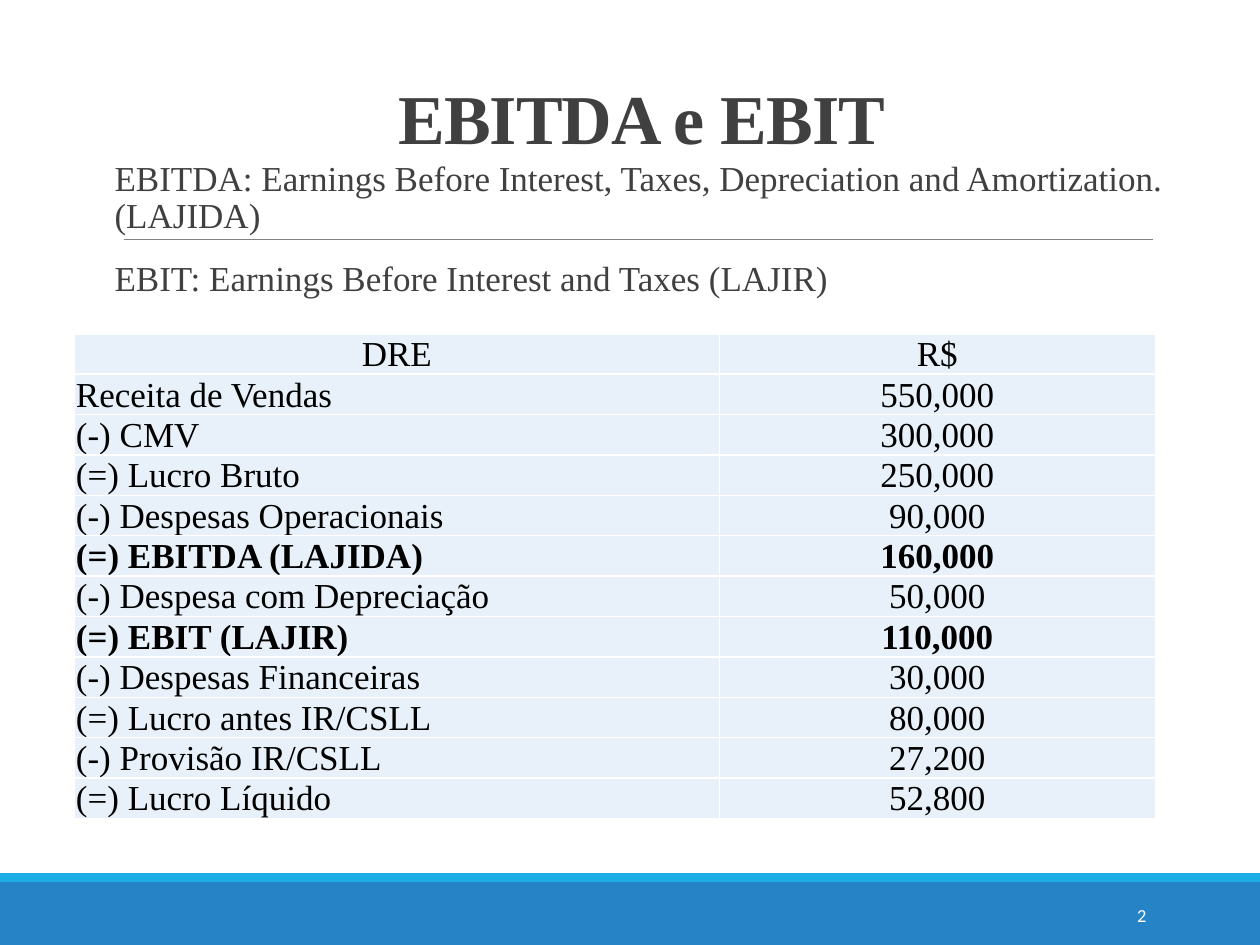
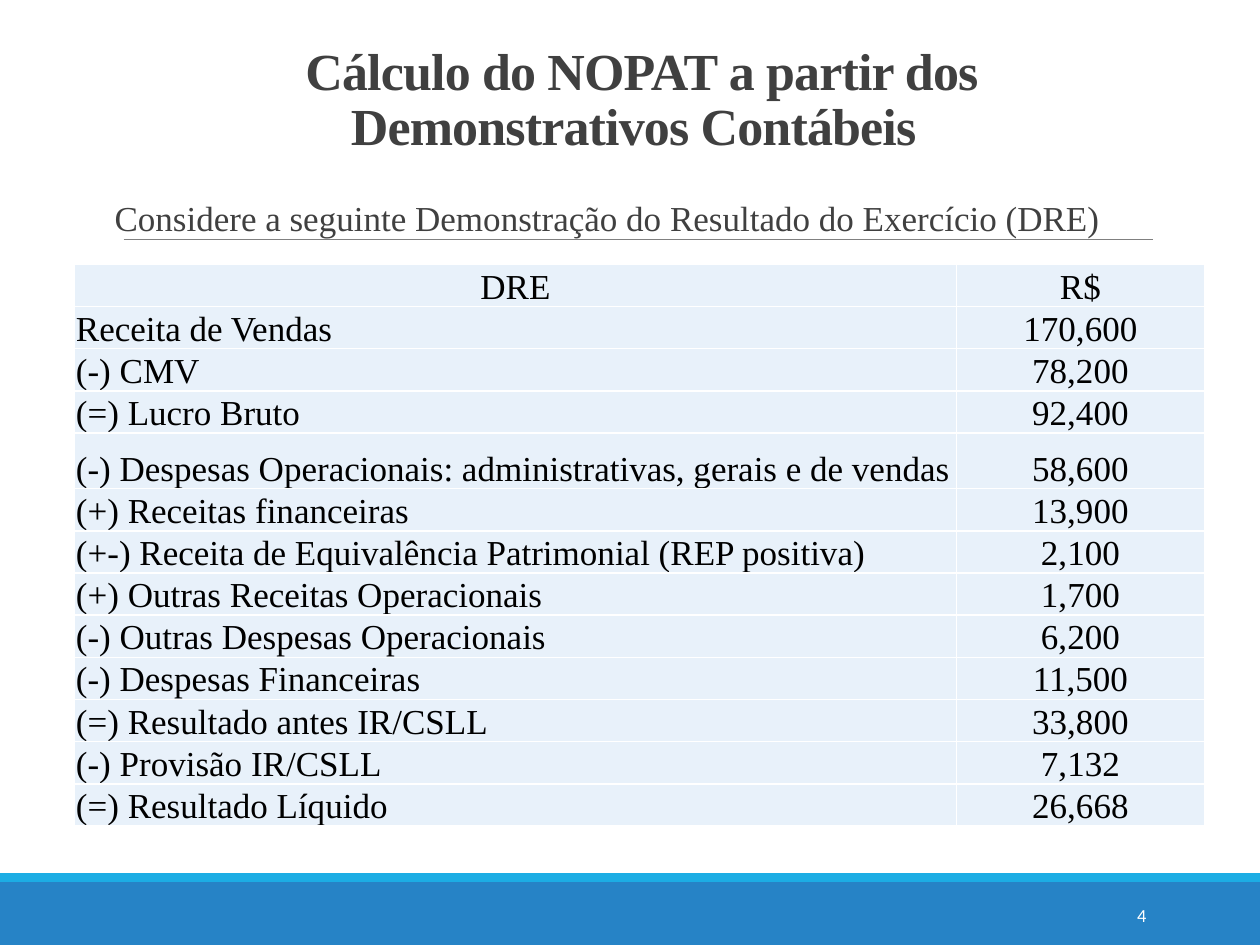
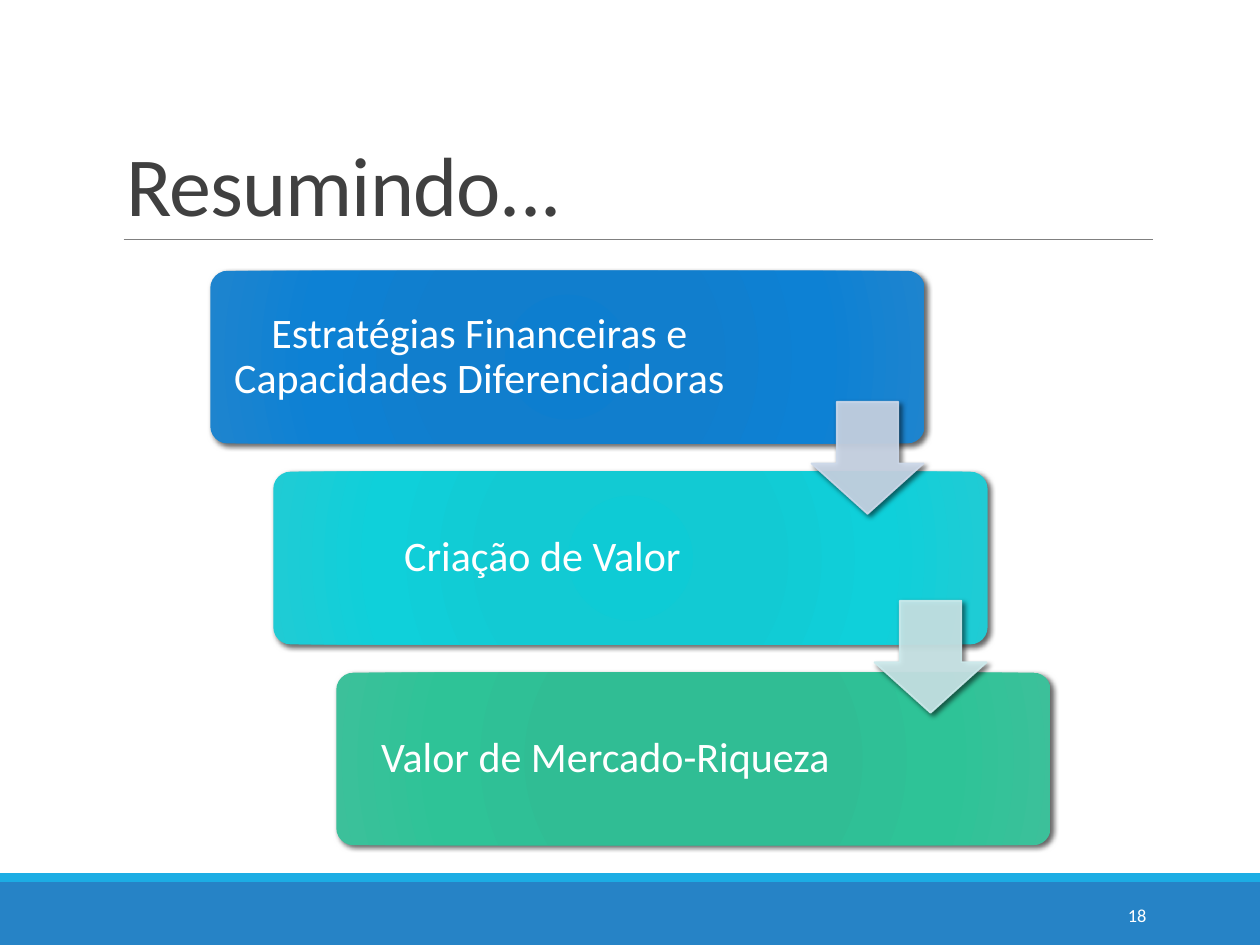
from lxml import etree
from pptx import Presentation
from pptx.dml.color import RGBColor
from pptx.enum.shapes import MSO_CONNECTOR, MSO_SHAPE
from pptx.enum.text import MSO_ANCHOR, MSO_AUTO_SIZE, PP_ALIGN
from pptx.oxml import parse_xml
from pptx.oxml.ns import nsdecls, qn
from pptx.util import Cm, Pt

LEFT, CENTER, RIGHT, JUSTIFY = PP_ALIGN.LEFT, PP_ALIGN.CENTER, PP_ALIGN.RIGHT, PP_ALIGN.JUSTIFY
MIDDLE, BOTTOM = MSO_ANCHOR.MIDDLE, MSO_ANCHOR.BOTTOM

THEME = {
    "band": "2683C6", "strip": "1CADE4", "rule": "808080", "cell": "E8F1FA", "border": "FFFFFF",
    "title": {"color": "404040", "name": "Times New Roman", "bold": True},
    "closing_title": {"color": "404040", "name": "Calibri", "bold": False},
    "body": {"color": "404040", "name": "Times New Roman", "size": Pt(20)},
    "table": {"color": "000000", "name": "Times New Roman", "size": Pt(20), "bold": False},
    "step": {"color": "FFFFFF", "name": "Calibri", "size": Pt(24)},
    "number": {"color": "FFFFFF", "name": "Calibri", "size": Pt(10.5)},
}

STATEMENTS = [
    {
        "number": "2", "title": [(" EBITDA e EBIT", 40)], "title_top": 0.79, "body_top": 3.12,
        "body": [
            ("EBITDA: Earnings Before Interest, Taxes, Depreciation and Amortization. (LAJIDA)", LEFT),
            ("EBIT: Earnings Before Interest and Taxes (LAJIR)", JUSTIFY),
        ],
        "table_top": 6.73, "columns": [13, 8.79], "row_height": 0.81,
        "tall_rows": {}, "bold_rows": [5, 7],
        "rows": [
            ("DRE", "R$"),
            ("Receita de Vendas", "550,000"),
            ("(-) CMV", "300,000"),
            ("(=) Lucro Bruto", "250,000"),
            ("(-) Despesas Operacionais", "90,000"),
            ("(=) EBITDA (LAJIDA)", "160,000"),
            ("(-) Despesa com Depreciação", "50,000"),
            ("(=) EBIT (LAJIR)", "110,000"),
            ("(-) Despesas Financeiras", "30,000"),
            ("(=) Lucro antes IR/CSLL", "80,000"),
            ("(-) Provisão IR/CSLL", "27,200"),
            ("(=) Lucro Líquido", "52,800"),
        ],
    },
    {
        "number": "4", "title_top": 0.74, "body_top": 3.94,
        "title": [(" ", 36), ("Cálculo do NOPAT a partir dos Demonstrativos Contábeis", 29.7)],
        "body": [("Considere a seguinte Demonstração do Resultado do Exercício (DRE)", LEFT)],
        "table_top": 5.33, "columns": [17.78, 5], "row_height": 0.85,
        "tall_rows": {4: 1.12}, "bold_rows": [],
        "rows": [
            ("DRE", "R$"),
            ("Receita de Vendas", "170,600"),
            ("(-) CMV", "78,200"),
            ("(=) Lucro Bruto", "92,400"),
            ("(-) Despesas Operacionais: administrativas, gerais e de vendas", "58,600"),
            ("(+) Receitas financeiras", "13,900"),
            ("(+-) Receita de Equivalência Patrimonial (REP positiva)", "2,100"),
            ("(+) Outras Receitas Operacionais", "1,700"),
            ("(-) Outras Despesas Operacionais", "6,200"),
            ("(-) Despesas Financeiras", "11,500"),
            ("(=) Resultado antes IR/CSLL", "33,800"),
            ("(-) Provisão IR/CSLL", "7,132"),
            ("(=) Resultado Líquido", "26,668"),
        ],
    },
]

STEPS = [
    ("Estratégias Financeiras e Capacidades Diferenciadoras", ["0D7ECF", "117ECD", "0D81D4", "1E84CE"]),
    ("Criação de Valor", ["0ECBD5", "12CAD3", "0FD0DA", "20CBD4"]),
    ("Valor de Mercado-Riqueza", ["2DBE94", "30BD94", "2EC397", "3CC09A"]),
]
GRADIENT_STOPS = [0, 34, 70, 100]
ARROW_COLORS = ["CDD9EA", "CDEAEC"]
SHADOW = (
    f'<a:effectLst {nsdecls("a")}><a:outerShdw blurRad="{Pt(3)}" dist="{Pt(2)}" dir="2700000" '
    'rotWithShape="0"><a:srgbClr val="000000"><a:alpha val="60000"/></a:srgbClr>'
    '</a:outerShdw></a:effectLst>'
)


def write(para, text, style, **changes):
    """Add a run to the paragraph, formatted by a theme style and any changes to it."""
    span = para.add_run()
    span.text = text
    for key, value in {**style, **changes}.items():
        if key == "color":
            span.font.color.rgb = RGBColor.from_string(value)
        else:
            setattr(span.font, key, value)
    return span


def place(frame, **values):
    """Set wrapping, anchor and margins of a text frame."""
    for key, value in {"word_wrap": True, "auto_size": MSO_AUTO_SIZE.NONE, **values}.items():
        setattr(frame, key, value)
    return frame.paragraphs[0]


deck = Presentation()
deck.slide_width, deck.slide_height = Cm(25.4), Cm(19.05)
layout = deck.slide_layouts[5]
pages = [deck.slides.add_slide(layout) for _ in range(3)]

# Shared bands and rule, moved into the layout
shapes = pages[0].shapes
shared = []
for color, top, height in [(THEME["band"], 17.78, 1.27), (THEME["strip"], 17.6, 0.18)]:
    band = shapes.add_shape(MSO_SHAPE.RECTANGLE, 0, Cm(top), deck.slide_width, Cm(height))
    band.shadow.inherit = False
    band.fill.solid()
    band.fill.fore_color.rgb = RGBColor.from_string(color)
    band.line.fill.background()
    shared.append(band)
rule = shapes.add_connector(MSO_CONNECTOR.STRAIGHT, Cm(2.49), Cm(4.83), Cm(23.24), Cm(4.83))
rule.line.color.rgb = RGBColor.from_string(THEME["rule"])
rule.line.width = Pt(0.5)
etree.SubElement(rule.element.spPr, qn("a:effectLst"))
shared.append(rule)
for shape in shared:
    layout.shapes.element.append(shape.element)

# Titles and page numbers
headings = [(item["title"], item["title_top"], 2.54, "title", CENTER, item["number"]) for item in STATEMENTS]
headings.append(([("Resumindo...", 48)], 0.79, 4.04, "closing_title", LEFT, "18"))
for page, (spans, top, height, style, align, number) in zip(pages, headings):
    title = page.shapes.title
    title.left, title.top, title.width, title.height = Cm(2.29), Cm(top), Cm(20.96), Cm(height)
    para = place(title.text_frame, vertical_anchor=BOTTOM)
    para.alignment, para.line_spacing = align, 0.85
    for text, size in spans:
        span = write(para, text, THEME[style], size=Pt(size))
        span.font._element.set("spc", "-50")
    box = page.shapes.add_textbox(Cm(20.62), Cm(17.93), Cm(2.74), Cm(1.02))
    para = place(box.text_frame, vertical_anchor=MIDDLE)
    para.alignment = RIGHT
    write(para, number, THEME["number"])

# Income statements
for page, item in zip(pages, STATEMENTS):
    box = page.shapes.add_textbox(Cm(2.31), Cm(item["body_top"]), Cm(21.79), Cm(11.18))
    para = place(box.text_frame, margin_left=0, margin_right=0)
    for index, (text, align) in enumerate(item["body"]):
        if index:
            para = box.text_frame.add_paragraph()
        para.alignment, para.line_spacing = align, 0.9
        para.space_before, para.space_after = Pt(12), Pt(2)
        write(para, text, THEME["body"])

    rows, columns = item["rows"], item["columns"]
    heights = [item["tall_rows"].get(index, item["row_height"]) for index in range(len(rows))]
    table = page.shapes.add_table(len(rows), len(columns), Cm(1.5), Cm(item["table_top"]),
                                  Cm(sum(columns)), Cm(sum(heights))).table
    table.first_row = table.horz_banding = False
    for column, width in zip(table.columns, columns):
        column.width = Cm(width)
    for row_index, values in enumerate(rows):
        table.rows[row_index].height = Cm(heights[row_index])
        for column_index, value in enumerate(values):
            cell = table.cell(row_index, column_index)
            cell.vertical_anchor = BOTTOM
            cell.margin_left = cell.margin_right = cell.margin_top = Cm(0.03)
            cell.margin_bottom = 0
            para = cell.text_frame.paragraphs[0]
            para.alignment = LEFT if row_index and not column_index else CENTER
            write(para, value, THEME["table"], bold=row_index in item["bold_rows"])
            properties = cell._tc.get_or_add_tcPr()
            for side in ["lnL", "lnR", "lnT", "lnB"]:
                properties.append(parse_xml(
                    f'<a:{side} {nsdecls("a")} w="{Pt(1)}"><a:solidFill>'
                    f'<a:srgbClr val="{THEME["border"]}"/></a:solidFill></a:{side}>'))
            cell.fill.solid()
            cell.fill.fore_color.rgb = RGBColor.from_string(THEME["cell"])

# Staircase of steps
shapes = pages[2].shapes
for index, (text, colors) in enumerate(STEPS):
    step = shapes.add_shape(MSO_SHAPE.ROUNDED_RECTANGLE, Cm(4.24 + 1.27 * index),
                            Cm(5.46 + 4.05 * index), Cm(14.4), Cm(3.48))
    step.adjustments[0] = 0.1
    step.line.fill.background()
    stops = "".join(f'<a:gs pos="{stop * 1000}"><a:srgbClr val="{color}"/></a:gs>'
                    for stop, color in zip(GRADIENT_STOPS, colors))
    step.element.spPr.insert(2, parse_xml(
        f'<a:gradFill {nsdecls("a")} rotWithShape="1"><a:gsLst>{stops}</a:gsLst><a:path path="circle">'
        '<a:fillToRect l="100000" t="100000" r="100000" b="100000"/></a:path></a:gradFill>'))
    step.element.spPr.append(parse_xml(SHADOW))
    para = place(step.text_frame, vertical_anchor=MIDDLE, margin_left=Cm(0.25), margin_right=Cm(3.8))
    para.alignment, para.line_spacing = CENTER, 0.9
    write(para, text, THEME["step"])

for index, color in enumerate(ARROW_COLORS):
    arrow = shapes.add_shape(MSO_SHAPE.DOWN_ARROW, Cm(16.36 + 1.27 * index),
                             Cm(8.1 + 4.01 * index), Cm(2.26), Cm(2.26))
    arrow.adjustments[0], arrow.adjustments[1] = 0.55, 0.45
    arrow.fill.solid()
    arrow.fill.fore_color.rgb = RGBColor.from_string(color)
    arrow.line.color.rgb = RGBColor.from_string(color)
    arrow.line.width = Pt(1)
    for tint in arrow.element.spPr.iter(qn("a:srgbClr")):
        etree.SubElement(tint, qn("a:alpha")).set("val", "90000")
    arrow.element.spPr.append(parse_xml(SHADOW))

deck.save("out.pptx")
